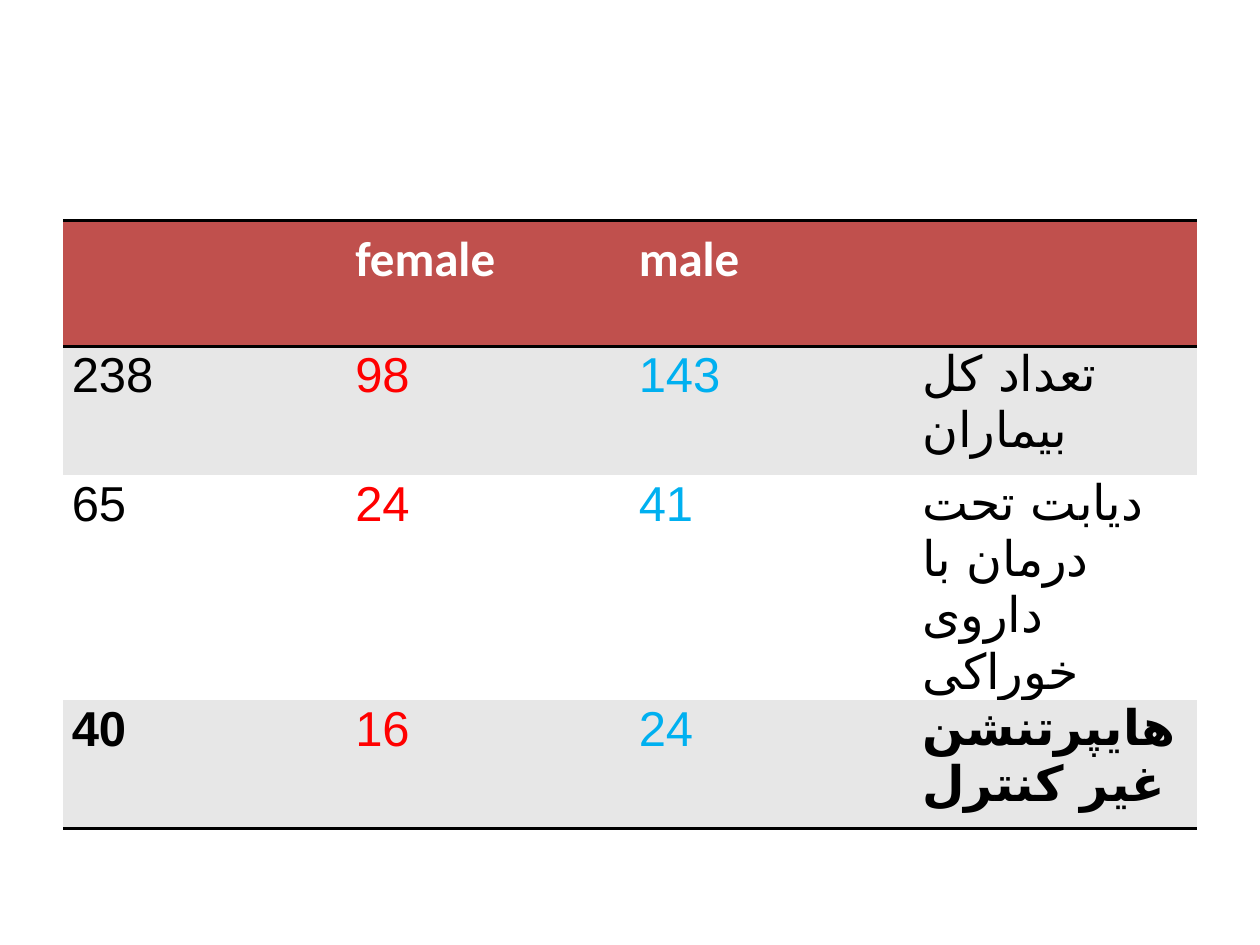
from lxml import etree
from pptx import Presentation
from pptx.dml.color import RGBColor
from pptx.enum.text import PP_ALIGN
from pptx.oxml.ns import qn
from pptx.util import Inches, Pt

LEFT = PP_ALIGN.LEFT
COLORS = {"head": "C0504D", "band": "E7E7E7", "white": "FFFFFF",
          "black": "000000", "female": "FF0000", "male": "00B0F0"}
ROWS = [
    ["", "female", "male", ""],
    ["238", "98", "143", "تعداد کل بیماران"],
    ["65", "24", "41", "دیابت تحت درمان با داروی خوراکی"],
    ["40", "16", "24", "هایپرتنشن غیر کنترل"],
]
INKS = ["black", "female", "male", "black"]
SIDES = ["lnL", "lnR", "lnT", "lnB"]
RULED = [["lnT", "lnB"], ["lnT"], [], ["lnB"]]


def color(name):
    """Return the named colour."""
    return RGBColor.from_string(COLORS[name])


def edge(cell, ruled):
    """Draw black borders on the ruled sides and none on the others."""
    props = cell._tc.get_or_add_tcPr()
    for i, side in enumerate(SIDES):
        line = etree.Element(qn(f"a:{side}"), w=str(Pt(2)))
        if side in ruled:
            fill = etree.SubElement(line, qn("a:solidFill"))
            etree.SubElement(fill, qn("a:srgbClr"), val=COLORS["black"])
        else:
            etree.SubElement(line, qn("a:noFill"))
        props.insert(i, line)


def write(cell, text, ink, bold, rtl, space, script):
    """Write one run of text in a cell."""
    para = cell.text_frame.paragraphs[0]
    para.alignment = LEFT
    para.line_spacing = space
    if rtl:
        para._p.get_or_add_pPr().set("rtl", "1")
    run = para.add_run()
    run.text = text
    font = run.font
    font.name, font.size, font.bold = "Calibri", Pt(28), bold
    font.color.rgb = color(ink)
    etree.SubElement(run._r.get_or_add_rPr(), qn("a:cs"), typeface=script)


def style(cell, fill, ruled):
    """Set the fill, margins and borders of a cell."""
    cell.fill.solid()
    cell.fill.fore_color.rgb = color(fill)
    cell.margin_left = cell.margin_right = Inches(0.07)
    cell.margin_top = cell.margin_bottom = 0
    edge(cell, ruled)


def add_grid(slide):
    """Add the table of patient counts."""
    frame = slide.shapes.add_table(
        len(ROWS), len(INKS), Inches(0.5), Inches(1.75), Inches(9), Inches(4.06))
    grid = frame.table
    end = len(INKS) - 1
    for i, row in enumerate(ROWS):
        head = i == 0
        grid.rows[i].height = Inches(1 if head else 1.02)
        fill = "head" if head else "band" if i % 2 else "white"
        for j, text in enumerate(row):
            cell = grid.cell(i, j)
            style(cell, fill, RULED[i])
            if text:
                ink = "white" if head else INKS[j]
                bold = head or (i == len(ROWS) - 1 and ink == "black")
                space = 1.15 if head else 0.99 if j == end else 1.04
                script = "DejaVu Sans" if j == end else "Arial"
                write(cell, text, ink, bold, not head and j < end, space, script)


def main():
    """Build and save the slide."""
    deck = Presentation()
    deck.slide_width, deck.slide_height = Inches(10), Inches(7.5)
    slide = deck.slides.add_slide(deck.slide_layouts[6])
    add_grid(slide)
    deck.save("out.pptx")


if __name__ == "__main__":
    main()
